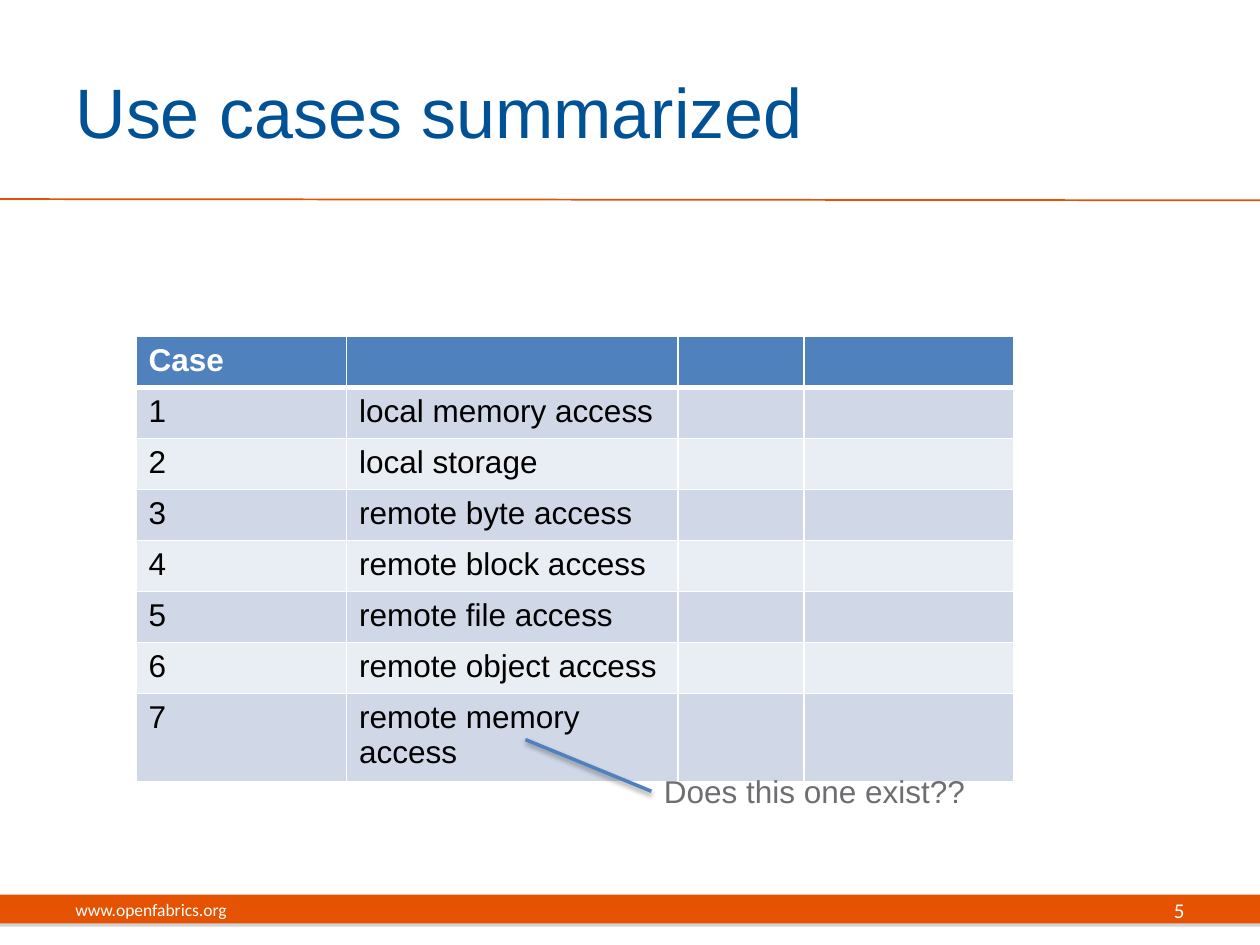
from dataclasses import dataclass

from lxml import etree
from pptx import Presentation
from pptx.dml.color import RGBColor
from pptx.enum import shapes, text
from pptx.oxml import ns
from pptx.util import Inches, Pt

ORANGE, BLUE, WHITE = "E55302", "4F81BD", "FFFFFF"
BANDS = ("D0D8E8", "E9EDF4")
COLS = (1.67, 2.63, 1, 1.67)
ROW = 0.405
CASES = ("local memory access", "local storage", "remote byte access",
         "remote block access", "remote file access",
         "remote object access", "remote memory access")


@dataclass
class Style:
    size: float
    color: str
    font: str = "Arial"
    bold: bool = False
    align: text.PP_ALIGN = text.PP_ALIGN.LEFT


@dataclass
class Label:
    words: str
    box: tuple
    style: Style
    wrap: bool = True
    anchor: text.MSO_ANCHOR = text.MSO_ANCHOR.MIDDLE


@dataclass
class Shadow:
    color: str
    alpha: int
    blur: float
    dist: float


def rgb(code: str) -> RGBColor:
    return RGBColor.from_string(code)


def sub(parent, tag: str, **attrs):
    return etree.SubElement(parent, ns.qn(tag),
                            {k: str(v) for k, v in attrs.items()})


def write(frame, words: str, style: Style) -> None:
    frame.text = words
    para = frame.paragraphs[0]
    para.alignment = style.align
    for run in para.runs:
        font = run.font
        font.name, font.size, font.bold = style.font, Pt(style.size), style.bold
        font.color.rgb = rgb(style.color)


def add_label(slide, label: Label):
    box = slide.shapes.add_textbox(*map(Inches, label.box))
    frame = box.text_frame
    frame.word_wrap = label.wrap
    frame.vertical_anchor = label.anchor
    write(frame, label.words, label.style)
    return box


def add_line(slide, start: tuple, end: tuple, color: str, width: float):
    line = slide.shapes.add_connector(
        shapes.MSO_CONNECTOR.STRAIGHT, *map(Inches, start + end))
    line.line.color.rgb = rgb(color)
    line.line.width = Pt(width)
    return line


def set_shadow(shape, shadow: Shadow | None = None) -> None:
    """Give a shape a downward shadow, or none at all."""
    effects = sub(shape._element.spPr, "a:effectLst")
    if shadow:
        outer = sub(effects, "a:outerShdw", blurRad=Pt(shadow.blur),
                    dist=Pt(shadow.dist), dir=90 * 60000, rotWithShape=0)
        tint = sub(outer, "a:srgbClr", val=shadow.color)
        sub(tint, "a:alpha", val=shadow.alpha * 1000)


def paint_cell(cell, fill: str, top: float, bottom: float) -> None:
    props = cell._tc.get_or_add_tcPr()
    for side, width in zip("LRTB", (1, 1, top, bottom)):
        edge = sub(props, f"a:ln{side}", w=Pt(width))
        sub(sub(edge, "a:solidFill"), "a:srgbClr", val=WHITE)
    cell.fill.solid()
    cell.fill.fore_color.rgb = rgb(fill)


def add_cases(slide) -> None:
    rows = [("Case", "")] + [(str(n), c) for n, c in enumerate(CASES, 1)]
    table = slide.shapes.add_table(
        len(rows), len(COLS), Inches(1.08), Inches(2.67),
        Inches(sum(COLS)), Inches(ROW * len(rows))).table
    for col, width in zip(table.columns, COLS):
        col.width = Inches(width)
    for r, row in enumerate(rows):
        head = r == 0
        fill = BLUE if head else BANDS[(r - 1) % 2]
        style = Style(18, WHITE if head else "000000", bold=head)
        for c in range(len(COLS)):
            cell = table.cell(r, c)
            paint_cell(cell, fill, 3 if r == 1 else 1, 3 if head else 1)
            if c < len(row) and row[c]:
                write(cell.text_frame, row[c], style)


def main() -> None:
    deck = Presentation()
    deck.slide_width, deck.slide_height = Inches(10), Inches(7.5)
    slide = deck.slides.add_slide(deck.slide_layouts[5])

    # Footer band and rule under the title
    band = slide.shapes.add_shape(
        shapes.MSO_SHAPE.RECTANGLE, *map(Inches, (0, 7.1, 10, 0.23)))
    band.fill.solid()
    band.fill.fore_color.rgb = rgb(ORANGE)
    band.line.fill.background()
    set_shadow(band, Shadow("808080", 35, 0, 1.8))
    set_shadow(add_line(slide, (0, 1.58), (10, 1.59), ORANGE, 1))

    # Title
    title = slide.shapes.title
    title.left, title.top, title.width, title.height = map(
        Inches, (0.5, 0.25, 8.17, 1.25))
    title.text_frame.vertical_anchor = text.MSO_ANCHOR.MIDDLE
    write(title.text_frame, "Use cases summarized", Style(40, "005195"))

    # Footer text
    add_label(slide, Label("www.openfabrics.org", (0.5, 7.02, 3.17, 0.4),
                           Style(10, WHITE, "Calibri")))
    add_label(slide, Label("5", (7.17, 7.02, 2.33, 0.4),
                           Style(12, WHITE, "Calibri",
                                 align=text.PP_ALIGN.RIGHT)))

    add_cases(slide)

    # Question about the last case
    note = add_label(slide, Label("Does this one exist??",
                                  (5.17, 6.08, 2.61, 0.4),
                                  Style(18, "6D6E71"), wrap=False,
                                  anchor=text.MSO_ANCHOR.TOP))
    note.text_frame.auto_size = text.MSO_AUTO_SIZE.SHAPE_TO_FIT_TEXT
    lead = add_line(slide, (5.17, 6.28), (4.17, 5.87), BLUE, 2)
    lead.begin_connect(note, 1)
    set_shadow(lead, Shadow("000000", 38, 3.1, 1.6))

    deck.save("out.pptx")


if __name__ == "__main__":
    main()
